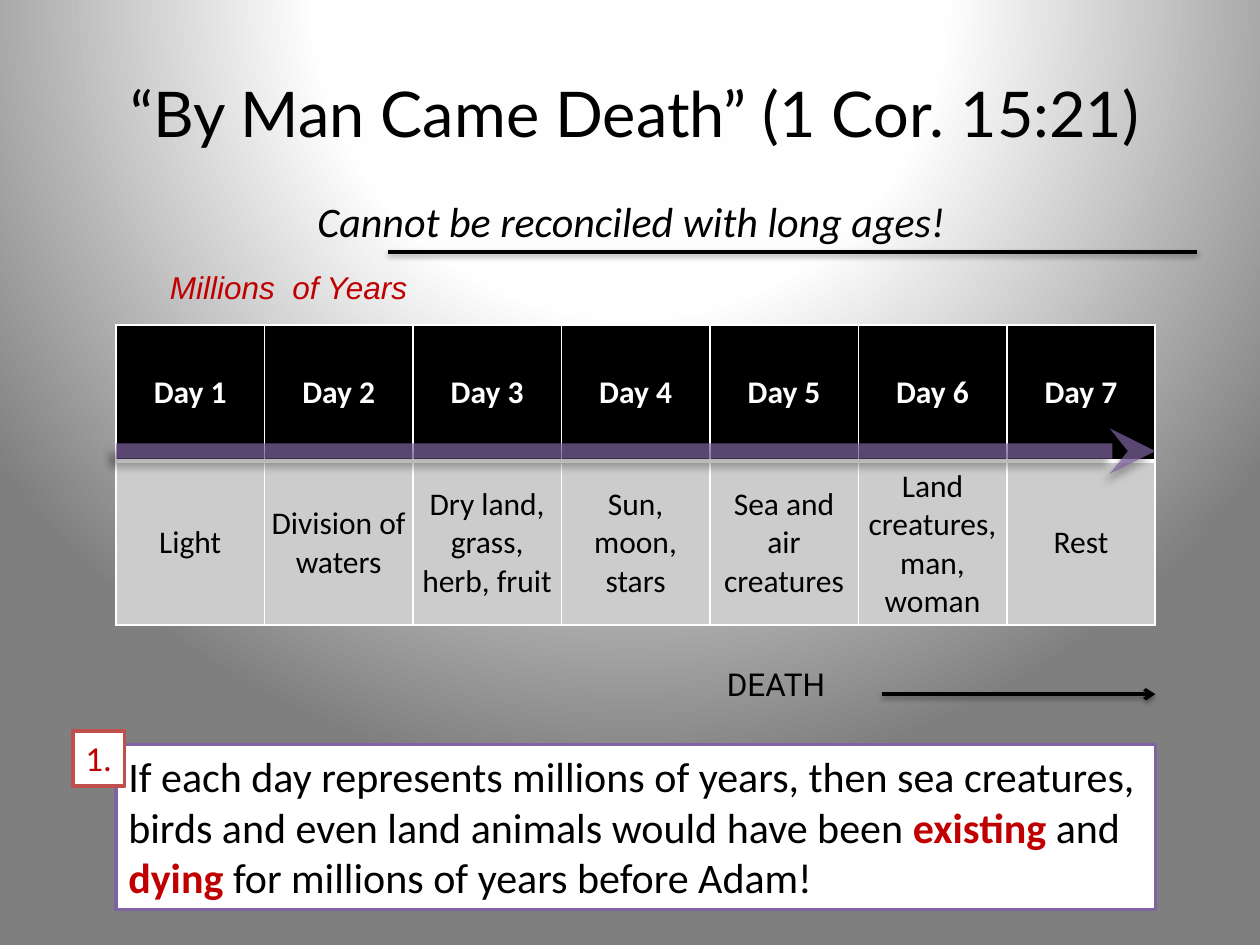
from lxml.etree import SubElement
from pptx import Presentation
from pptx.dml.color import RGBColor
from pptx.enum.shapes import MSO_CONNECTOR, MSO_SHAPE
from pptx.enum.text import MSO_ANCHOR, MSO_AUTO_SIZE, PP_ALIGN
from pptx.oxml import parse_xml
from pptx.oxml.ns import nsdecls, qn
from pptx.util import Inches, Pt

COLORS = {
    "black": "000000", "white": "FFFFFF", "pale": "CCCCCC", "red": "C00000",
    "purple": "8064A2", "rose": "C0504D", "mist": "FEFEFE", "gray": "7F7F7F",
}
LEFT, WIDTH = 0.92, 8.25
RIGHT = LEFT + WIDTH
DAYS = [
    ("Day 1", "Light"),
    ("Day 2", "Division of waters"),
    ("Day 3", "Dry land, grass, herb, fruit"),
    ("Day 4", "Sun, moon, stars"),
    ("Day 5", "Sea and air creatures"),
    ("Day 6", "Land creatures, man, woman"),
    ("Day 7", "Rest"),
]


def rgb(name):
    return RGBColor.from_string(COLORS[name])


def style(run, size, face="Calibri", color="black", bold=False, italic=False):
    font = run.font
    font.size, font.name = Pt(size), face
    font.bold, font.italic = bold, italic
    font.color.rgb = rgb(color)


def paint(slide):
    """Fill the background with a circular gradient."""
    stops = "".join(
        f'<a:gs pos="{pos * 1000}"><a:srgbClr val="{COLORS[name]}"/></a:gs>'
        for pos, name in ((0, "white"), (40, "mist"), (100, "gray")))
    back = parse_xml(
        f'<p:bg {nsdecls("p", "a")}><p:bgPr><a:gradFill rotWithShape="1">'
        f'<a:gsLst>{stops}</a:gsLst><a:path path="circle">'
        '<a:fillToRect l="50000" t="-80000" r="50000" b="180000"/></a:path>'
        '</a:gradFill><a:effectLst/></p:bgPr></p:bg>')
    slide.element.cSld.insert(0, back)


def add_line(slide, x, end, y, width=2, color="black", head=None, alpha=None,
             shade=(38, 3.1, 1.6, 90)):
    """Draw a level line; shade is opacity, blur, distance and angle."""
    line = slide.shapes.add_connector(
        MSO_CONNECTOR.STRAIGHT, Inches(x), Inches(y), Inches(end), Inches(y))
    line.line.color.rgb = rgb(color)
    line.line.width = Pt(width)
    props = line.element.spPr
    edge = props.find(qn("a:ln"))
    if alpha:
        tint = edge.find(".//" + qn("a:srgbClr"))
        SubElement(tint, qn("a:alpha"), val=str(alpha * 1000))
    if head:
        SubElement(edge, qn("a:tailEnd"), type=head)
    clear, blur, gap, angle = shade
    props.append(parse_xml(
        f'<a:effectLst {nsdecls("a")}><a:outerShdw blurRad="{Pt(blur)}" '
        f'dist="{Pt(gap)}" dir="{angle * 60000}" rotWithShape="0">'
        f'<a:srgbClr val="{COLORS["black"]}"><a:alpha val="{clear * 1000}"/>'
        '</a:srgbClr></a:outerShdw></a:effectLst>'))


def add_label(slide, box, text, size, **look):
    label = slide.shapes.add_textbox(*map(Inches, box))
    frame = label.text_frame
    frame.text = text
    frame.word_wrap = False
    frame.auto_size = MSO_AUTO_SIZE.SHAPE_TO_FIT_TEXT
    style(frame.paragraphs[0].runs[0], size, **look)


def add_box(slide, box, edge, parts, size, wrap=True):
    """Draw a white framed box; parts are (text, color, bold)."""
    shape = slide.shapes.add_shape(MSO_SHAPE.RECTANGLE, *map(Inches, box))
    shape.shadow.inherit = False
    shape.fill.solid()
    shape.fill.fore_color.rgb = rgb("white")
    shape.line.color.rgb = rgb(edge)
    shape.line.width = Pt(2)
    frame = shape.text_frame
    frame.word_wrap = wrap
    frame.auto_size = MSO_AUTO_SIZE.SHAPE_TO_FIT_TEXT
    frame.vertical_anchor = MSO_ANCHOR.TOP
    para = frame.paragraphs[0]
    para.alignment = PP_ALIGN.LEFT
    for text, color, bold in parts:
        run = para.add_run()
        run.text = text
        style(run, size, color=color, bold=bold)


def set_cell(cell, text, fill, color, bold, edges):
    props = cell._tc.get_or_add_tcPr()
    for side, width in edges.items():
        props.append(parse_xml(
            f'<a:ln{side} {nsdecls("a")} w="{Pt(width)}"><a:solidFill>'
            f'<a:srgbClr val="{COLORS["white"]}"/></a:solidFill></a:ln{side}>'))
    cell.fill.solid()
    cell.fill.fore_color.rgb = rgb(fill)
    cell.margin_left = cell.margin_right = Inches(0.05)
    cell.margin_top = cell.margin_bottom = Inches(0.05)
    cell.vertical_anchor = MSO_ANCHOR.MIDDLE
    cell.text_frame.text = text
    para = cell.text_frame.paragraphs[0]
    para.alignment = PP_ALIGN.CENTER
    style(para.runs[0], 18, color=color, bold=bold)


def add_days(slide):
    high = 1.08
    table = slide.shapes.add_table(
        2, len(DAYS), Inches(LEFT), Inches(2.58), Inches(WIDTH),
        Inches(2 * high)).table
    for col, (day, work) in enumerate(DAYS):
        set_cell(table.cell(0, col), day, "black", "white", True,
                 {"L": 1, "R": 1, "T": 1, "B": 3})
        set_cell(table.cell(1, col), work, "pale", "black", False,
                 {"L": 1, "R": 1, "B": 1})


def set_title(slide, text):
    title = slide.shapes.title
    title.left, title.top = Inches(0.58), Inches(0.08)
    title.width, title.height = Inches(8.92), Inches(1.62)
    frame = title.text_frame
    frame.text = text
    frame.vertical_anchor = MSO_ANCHOR.MIDDLE
    frame.paragraphs[0].alignment = PP_ALIGN.CENTER
    style(frame.paragraphs[0].runs[0], 36, "Lato")


def main():
    deck = Presentation()
    deck.slide_width, deck.slide_height = Inches(10), Inches(7.5)
    slide = deck.slides.add_slide(deck.slide_layouts[5])
    paint(slide)

    # Heading
    add_line(slide, 3.08, 9.5, 2)
    set_title(slide, "“By Man Came Death” (1 Cor. 15:21)")
    add_label(slide, (2.42, 1.5, 5.25, 0.5),
              "Cannot be reconciled with long ages!", 24, italic=True)

    # Days of creation with the time arrow
    add_days(slide)
    add_line(slide, LEFT, RIGHT, 3.58, 8.75, "purple", "stealth", 70,
             (40, 4, 6, 135))
    add_label(slide, (1.25, 2.08, 7.33, 0.49), "Millions  of Years", 18,
              face="Arial", color="red", italic=True)

    # Death arrow
    add_label(slide, (5.67, 5.23, 1.33, 0.57), "DEATH", 18, face="Roboto")
    add_line(slide, 7, RIGHT, 5.51, head="arrow")

    # Numbered argument
    add_box(slide, (LEFT, 5.91, WIDTH, 1.31), "purple", [
        ("If each day represents millions of years, then sea creatures, birds "
         "and even land animals would have been ", "black", False),
        ("existing ", "red", True),
        ("and ", "black", False),
        ("dying ", "red", True),
        ("for millions of years before Adam!", "black", False),
    ], 24)
    add_box(slide, (0.58, 5.8, 0.41, 0.44), "rose", [("1.", "red", False)],
            20, wrap=False)

    deck.save("out.pptx")


if __name__ == "__main__":
    main()
